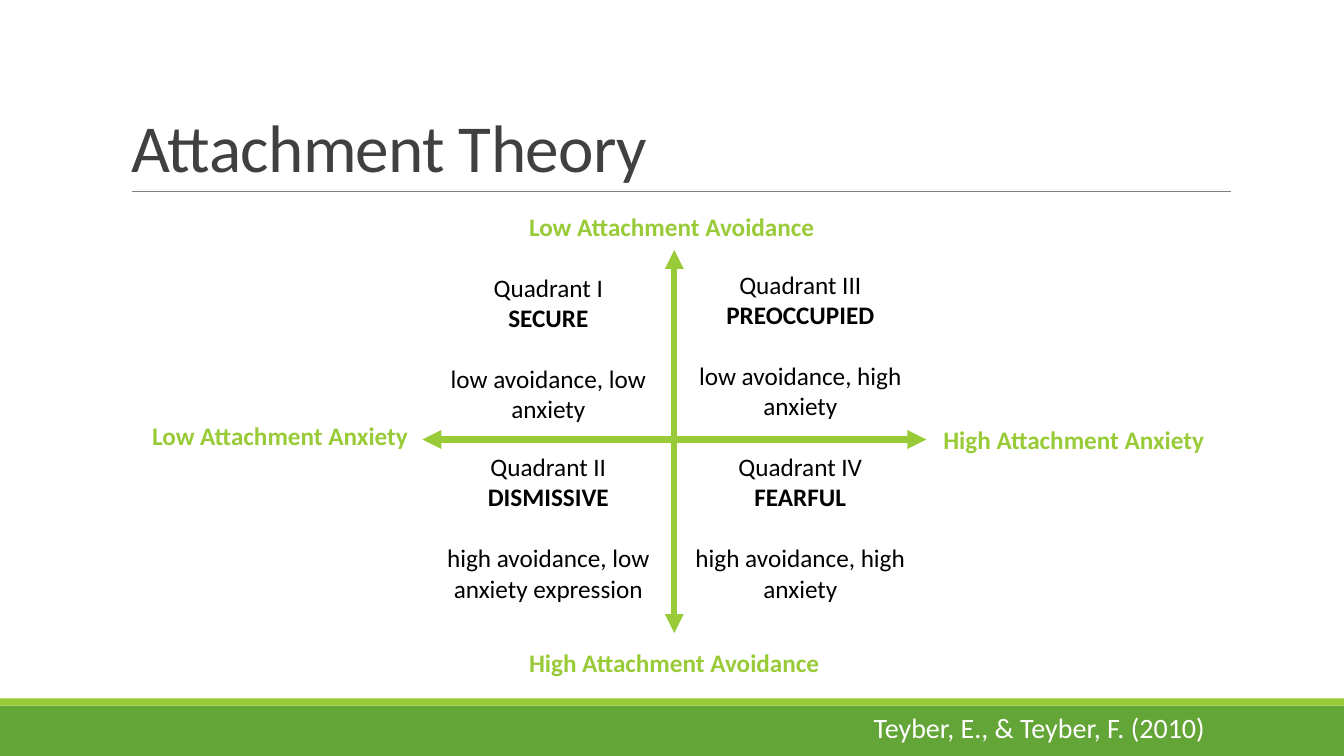
from lxml.etree import SubElement
from pptx import Presentation
from pptx.dml.color import RGBColor
from pptx.enum.shapes import MSO_CONNECTOR, MSO_SHAPE
from pptx.enum.text import MSO_ANCHOR, MSO_AUTO_SIZE, PP_ALIGN
from pptx.oxml.ns import qn
from pptx.util import Inches, Pt

HUES = {"lime": "99CB38", "green": "63A537", "gray": "808080",
        "dark": "404040", "black": "000000", "white": "FFFFFF"}
COLS, ROWS = 160, 90


class Deck:
    """Hold the style and the current slide, laid out on a 160 by 90 grid."""

    def __init__(self):
        self.show = Presentation()
        self.show.slide_width = Inches(13.33)
        self.show.slide_height = Inches(7.5)
        self.page = self.show.slides.add_slide(self.show.slide_layouts[1])
        self.shapes = self.page.shapes

    def grid(self, *spots):
        units = (self.show.slide_width / COLS, self.show.slide_height / ROWS)
        return [round(spot * units[i % 2]) for i, spot in enumerate(spots)]

    def apply(self, item, form):
        for name, value in form.items():
            setattr(item, name, value)

    def fill(self, shape, lines, hue, size, para={}, frame={}):
        text = shape.text_frame
        self.apply(text, {"word_wrap": True, "auto_size": MSO_AUTO_SIZE.NONE, **frame})
        for i, (words, bold, gap) in enumerate(lines):
            line = text.add_paragraph() if i else text.paragraphs[0]
            self.apply(line, {"space_before": Pt(gap), **para})
            run = line.add_run()
            run.text = words
            self.apply(run.font, {"name": "Calibri", "size": Pt(size), "bold": bold})
            run.font.color.rgb = RGBColor.from_string(HUES[hue])
        return text

    def place(self, shape, box):
        names = ("left", "top", "width", "height")
        self.apply(shape, dict(zip(names, self.grid(*box))))

    def title(self, words, box):
        shape = self.shapes.title
        self.place(shape, box)
        text = self.fill(shape, [(words, False, 0)], "dark", 48,
                         {"alignment": PP_ALIGN.LEFT, "line_spacing": 0.85},
                         {"vertical_anchor": MSO_ANCHOR.BOTTOM})
        text.paragraphs[0].runs[0].font._element.set("spc", "-50")

    def source(self, words, box):
        shape = self.page.placeholders[1]
        self.place(shape, box)
        self.shapes._spTree.append(shape._element)
        text = self.fill(shape, [(words, False, 0)], "white", 20,
                         {"line_spacing": 0.9}, {"margin_left": 0, "margin_right": 0})
        props = text.paragraphs[0]._p.get_or_add_pPr()
        for name, value in {"marL": 0.1, "indent": -0.1}.items():
            props.set(name, str(int(Inches(value))))
        SubElement(props, qn("a:buNone"))

    def band(self, hue, box):
        shape = self.shapes.add_shape(MSO_SHAPE.RECTANGLE, *self.grid(*box))
        shape.shadow.inherit = False
        shape.fill.solid()
        shape.fill.fore_color.rgb = RGBColor.from_string(HUES[hue])
        shape.line.fill.background()

    def line(self, hue, width, ends, heads=()):
        shape = self.shapes.add_connector(MSO_CONNECTOR.STRAIGHT, *self.grid(*ends))
        shape.line.color.rgb = RGBColor.from_string(HUES[hue])
        shape.line.width = Pt(width)
        for head in heads:
            SubElement(shape.line._ln, qn(head), type="triangle")
        SubElement(shape._element.spPr, qn("a:effectLst"))

    def text(self, lines, hue, box, align=PP_ALIGN.LEFT):
        shape = self.shapes.add_textbox(*self.grid(*box))
        self.fill(shape, lines, hue, 18, {"alignment": align})


def main():
    deck = Deck()
    deck.band("green", (0, 84, COLS, 6))
    deck.band("lime", (0, 83.16, COLS, 0.84))
    deck.line("gray", 0.5, (15.72, 22.8, 146.52, 22.8))
    deck.title("Attachment Theory", (14.4, 3.72, 132, 19.08))
    deck.source("Teyber, E., & Teyber, F. (2010)", (104, 84.48, 56, 5.52))

    mid, level, span = 80.28, 52.32, 30
    for ends in ((mid, 29.76, mid, 75.36), (mid + span, level, mid - span, level)):
        deck.line("lime", 4.5, ends, ("a:headEnd", "a:tailEnd"))

    quads = (("I", "SECURE", "low avoidance, low anxiety", -1, 31.8),
             ("II", "DISMISSIVE", "high avoidance, low anxiety expression", -1, 53.16),
             ("IV", "FEARFUL", "high avoidance, high anxiety", 0, 53.16),
             ("III", "PREOCCUPIED", "low avoidance, high anxiety", 0, 31.44))
    for count, name, trait, side, top in quads:
        lines = [(f"Quadrant {count}", False, 0), (name, True, 0), (trait, False, 22)]
        deck.text(lines, "black", (mid + side * span, top, span, 20), PP_ALIGN.CENTER)

    poles = (("Low Attachment Avoidance", 61.8, 24.6, 36.72),
             ("High Attachment Avoidance", 61.8, 76.44, 37.32),
             ("Low Attachment Anxiety", 16.92, 49.44, 33.24),
             ("High Attachment Anxiety", 111.12, 49.92, 34.8))
    for words, left, top, width in poles:
        deck.text([(words, True, 0)], "lime", (left, top, width, 4.8))

    deck.show.save("out.pptx")


if __name__ == "__main__":
    main()
